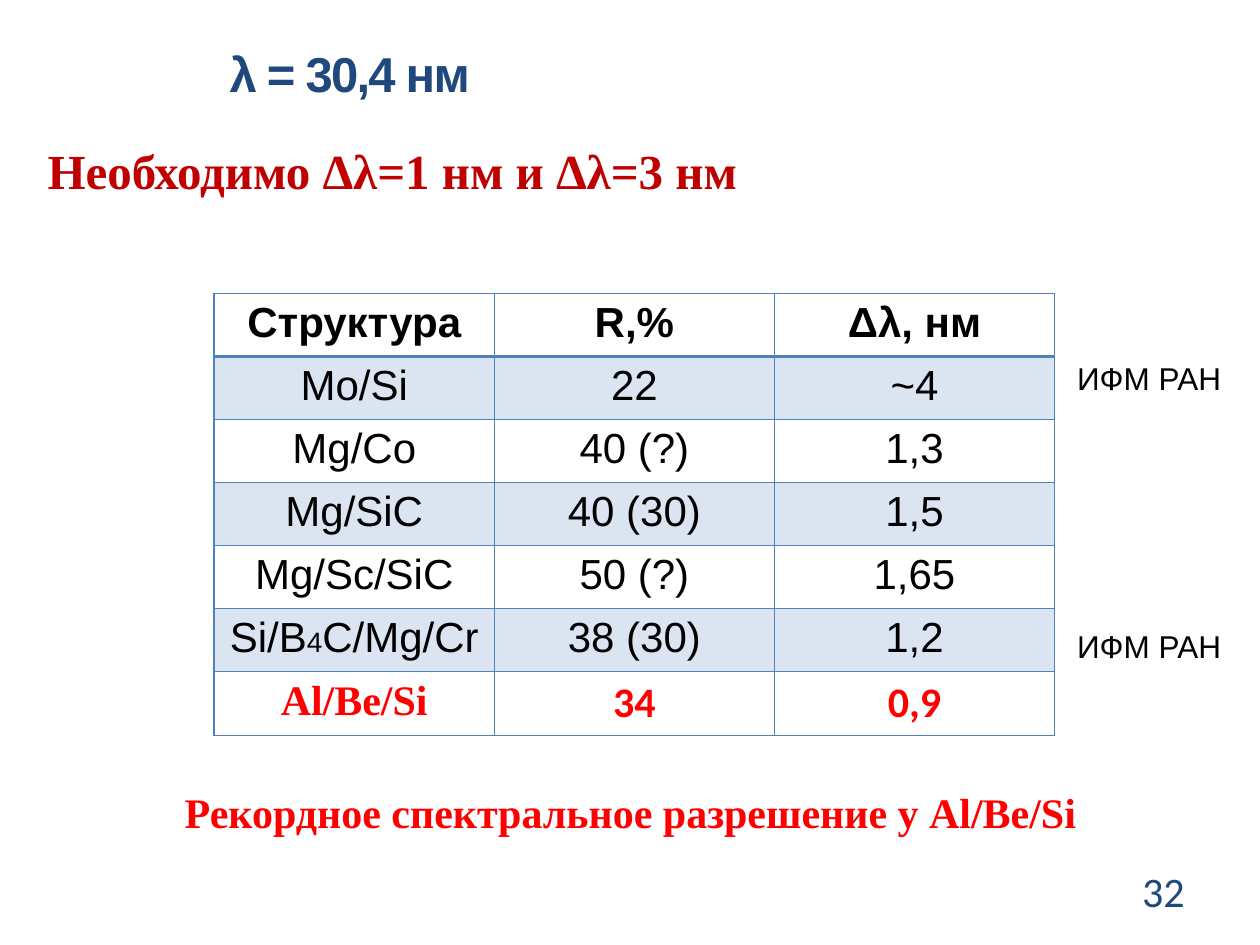
"""Build the slide comparing multilayer structures at 30.4 nm."""
from lxml.etree import SubElement
from pptx import Presentation
from pptx.dml.color import RGBColor
from pptx.enum.text import MSO_ANCHOR, MSO_AUTO_SIZE, PP_ALIGN
from pptx.oxml.ns import qn
from pptx.util import Inches, Pt

BLACK = RGBColor(0x00, 0x00, 0x00)
RED = RGBColor(0xFF, 0x00, 0x00)
DARK_RED = RGBColor(0xC0, 0x00, 0x00)
NAVY = RGBColor(0x1F, 0x49, 0x7D)
BLUE = RGBColor(0x4F, 0x81, 0xBD)


def format_paragraph(paragraph, alignment, font_name, size, color, bold):
    paragraph.alignment = alignment
    for run in paragraph.runs:
        run.font.name = font_name
        run.font.size = Pt(size)
        run.font.bold = bold
        run.font.color.rgb = color


def add_border(cell, side, width):
    line = SubElement(cell._tc.get_or_add_tcPr(), qn(f"a:{side}"), w=str(Pt(width)))
    fill = SubElement(line, qn("a:solidFill"))
    SubElement(fill, qn("a:srgbClr"), val=str(BLUE))


presentation = Presentation()
presentation.slide_width = Inches(10)
presentation.slide_height = Inches(7.5)
slide = presentation.slides.add_slide(presentation.slide_layouts[6])

rows = [
    ("Структура", "R,%", "Δλ, нм"),
    ("Mo/Si", "22", "~4"),
    ("Mg/Co", "40 (?)", "1,3"),
    ("Mg/SiC", "40 (30)", "1,5"),
    ("Mg/Sc/SiC", "50 (?)", "1,65"),
    ("Si/B4C/Mg/Cr", "38 (30)", "1,2"),
    ("Al/Be/Si", "34", "0,9"),
]
last_row = len(rows) - 1
table = slide.shapes.add_table(
    len(rows), 3, Inches(1.7), Inches(2.33), Inches(6.67), Inches(3.5)
).table

for row_index, values in enumerate(rows):
    for column_index, value in enumerate(values):
        cell = table.cell(row_index, column_index)
        paragraph = cell.text_frame.paragraphs[0]
        if value == "Si/B4C/Mg/Cr":
            for part in ("Si/B", "4", "C/Mg/Cr"):
                paragraph.add_run().text = part
        else:
            paragraph.text = value
        font_name, color = "Arial", BLACK
        if row_index == last_row:
            font_name = "Calibri" if column_index else "Times New Roman"
            color = RED
        bold = row_index in (0, last_row)
        format_paragraph(paragraph, PP_ALIGN.CENTER, font_name, 24, color, bold)
        if len(paragraph.runs) == 3:
            paragraph.runs[1].font.size = Pt(16)

        add_border(cell, "lnL", 1)
        add_border(cell, "lnR", 1)
        add_border(cell, "lnT", 2 if row_index == 1 else 1)
        add_border(cell, "lnB", 2 if row_index == 0 else 1)
        if row_index % 2:
            cell.fill.solid()
            cell.fill.fore_color.rgb = BLUE
            fill_color = cell._tc.tcPr.find(f"{qn('a:solidFill')}/{qn('a:srgbClr')}")
            SubElement(fill_color, qn("a:alpha"), val="20000")
        else:
            cell.fill.background()

LEFT, CENTER, RIGHT = PP_ALIGN.LEFT, PP_ALIGN.CENTER, PP_ALIGN.RIGHT
TOP, MIDDLE = MSO_ANCHOR.TOP, MSO_ANCHOR.MIDDLE
texts = [
    ("λ = 30,4 нм", 0, 0.29, 5.55, 0.57, True, MIDDLE, CENTER, "Arial", 28, NAVY, True),
    ("Необходимо Δλ=1 нм и Δλ=3 нм", 0.28, 1.07, 5.69, 0.57, False, TOP, LEFT,
     "Times New Roman", 28, DARK_RED, True),
    ("ИФМ РАН", 8.45, 2.8, 1.36, 0.4, False, TOP, LEFT, "Arial", 18, BLACK, False),
    ("ИФМ РАН", 8.45, 4.93, 1.36, 0.4, False, TOP, LEFT, "Arial", 18, BLACK, False),
    ("Рекордное спектральное разрешение у Al/Be/Si", 0.52, 6.19, 8.97, 0.5, True, TOP,
     CENTER, "Times New Roman", 24, RED, True),
    ("32", 7.17, 6.87, 2.33, 0.4, True, MIDDLE, RIGHT, "Calibri", 24, NAVY, False),
]
for text, left, top, width, height, wrap, anchor, *text_format in texts:
    shape = slide.shapes.add_textbox(Inches(left), Inches(top), Inches(width), Inches(height))
    text_frame = shape.text_frame
    text_frame.text = text
    text_frame.word_wrap = wrap
    text_frame.vertical_anchor = anchor
    if anchor == TOP:
        text_frame.auto_size = MSO_AUTO_SIZE.SHAPE_TO_FIT_TEXT
    paragraph = text_frame.paragraphs[0]
    format_paragraph(paragraph, *text_format)
    if text.startswith("λ"):
        paragraph.runs[0]._r.get_or_add_rPr().set("spc", "-100")

presentation.save("out.pptx")
